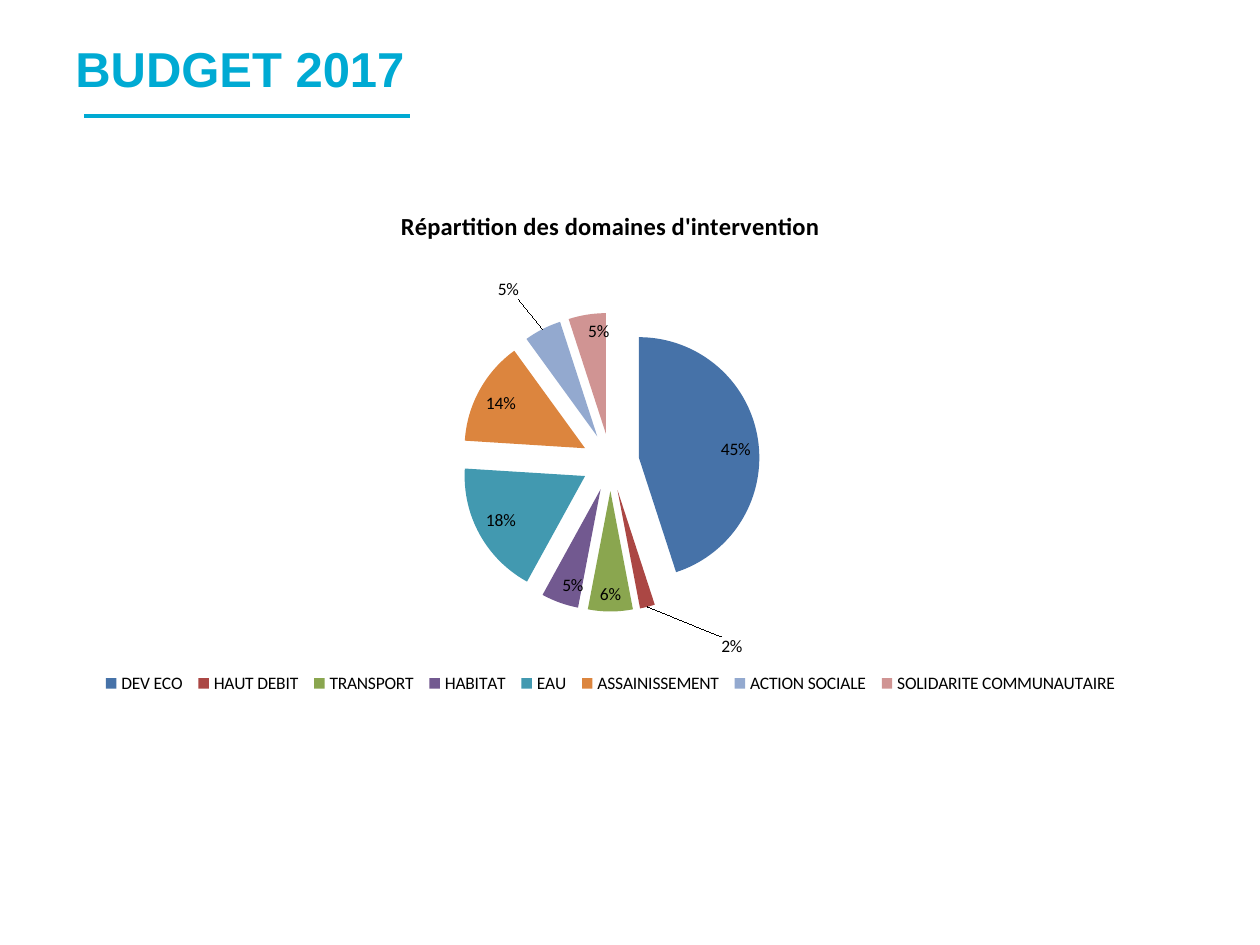
from dataclasses import dataclass

from lxml.etree import SubElement
from pptx import Presentation
from pptx.chart.chart import Chart
from pptx.chart.data import CategoryChartData
from pptx.dml.color import RGBColor
from pptx.enum.chart import XL_CHART_TYPE, XL_LABEL_POSITION, XL_LEGEND_POSITION
from pptx.enum.shapes import MSO_CONNECTOR
from pptx.enum.text import MSO_ANCHOR
from pptx.oxml import parse_xml
from pptx.oxml.ns import nsdecls, qn
from pptx.slide import Slide
from pptx.util import Inches, Pt


@dataclass(frozen=True)
class Theme:
    accent: RGBColor = RGBColor(0x00, 0xAA, 0xD3)
    ink: RGBColor = RGBColor(0, 0, 0)
    heading_font: str = "Arial"
    chart_font: str = "Calibri"
    heading_size: Pt = Pt(28)
    chart_title_size: Pt = Pt(14)
    chart_size: Pt = Pt(10)


@dataclass(frozen=True)
class Domain:
    name: str
    share: int
    color: str
    label_shift: tuple[float, float] | None = None


THEME = Theme()
EXPLOSION = 24
DOMAINS = [
    Domain("DEV ECO", 45, "4672A8"),
    Domain("HAUT DEBIT", 2, "AB4744", (0.07, 0.04)),
    Domain("TRANSPORT", 6, "8AA64F"),
    Domain("HABITAT", 5, "725990"),
    Domain("EAU", 18, "4299B0"),
    Domain("ASSAINISSEMENT", 14, "DC853E"),
    Domain("ACTION SOCIALE", 5, "93A9CF", (-0.02, -0.04)),
    Domain("SOLIDARITE COMMUNAUTAIRE", 5, "D09493"),
]


def place(element, index: int, **settings: object) -> None:
    """Give a chart element a manual layout, as fractions of the chart."""
    for old in element.findall(qn("c:layout")):
        element.remove(old)
    layout = parse_xml(f"<c:layout {nsdecls('c')}><c:manualLayout/></c:layout>")
    for tag, value in settings.items():
        SubElement(layout[0], qn(f"c:{tag}")).set("val", str(value))
    element.insert(index, layout)


def add_heading(slide: Slide) -> None:
    underline = slide.shapes.add_connector(
        MSO_CONNECTOR.STRAIGHT, Inches(0.67), Inches(0.92), Inches(3.25), Inches(0.92))
    underline.line.color.rgb = THEME.accent
    underline.line.width = Pt(2)
    SubElement(underline.element.spPr, qn("a:effectLst"))

    heading = slide.shapes.add_textbox(Inches(0.5), 0, Inches(9), Inches(1.08)).text_frame
    heading.word_wrap = True
    heading.vertical_anchor = MSO_ANCHOR.MIDDLE
    paragraph = heading.paragraphs[0]
    paragraph.text = "BUDGET 2017"
    paragraph.font.name = THEME.heading_font
    paragraph.font.size = THEME.heading_size
    paragraph.font.bold = True
    paragraph.font.color.rgb = THEME.accent


def style_slices(chart: Chart) -> None:
    series = chart.plots[0].series[0]
    labels = series.data_labels
    labels.show_percentage = True
    labels.show_value = False
    labels.number_format = "0%"
    labels.number_format_is_linked = False
    labels.position = XL_LABEL_POSITION.INSIDE_END
    labels.font.name = THEME.chart_font
    labels.font.size = THEME.chart_size
    labels.font.color.rgb = THEME.ink

    for index, domain in enumerate(DOMAINS):
        point = series.points[index]
        point.format.fill.solid()
        point.format.fill.fore_color.rgb = RGBColor.from_string(domain.color)
        if domain.label_shift:
            point.data_label.position = XL_LABEL_POSITION.OUTSIDE_END

    moved = [domain for domain in DOMAINS if domain.label_shift]
    for label, domain in zip(chart.element.xpath(".//c:dLbl"), moved):
        label.find(qn("c:showVal")).set("val", "0")
        label.find(qn("c:showPercent")).set("val", "1")
        shift_x, shift_y = domain.label_shift
        place(label, 1, x=shift_x, y=shift_y)

    first_slice = chart.element.xpath(".//c:dPt")[0]
    first_slice.addprevious(
        parse_xml(f'<c:explosion {nsdecls("c")} val="{EXPLOSION}"/>'))


def add_budget_chart(slide: Slide) -> None:
    budget = CategoryChartData()
    budget.categories = [domain.name for domain in DOMAINS]
    budget.add_series("Series 1", [domain.share for domain in DOMAINS])
    chart = slide.shapes.add_chart(
        XL_CHART_TYPE.PIE, Inches(0.76), Inches(1.48), Inches(8.17), Inches(4.56), budget).chart
    chart.font.name = THEME.chart_font
    chart.font.size = THEME.chart_size
    chart.font.color.rgb = THEME.ink

    chart.has_title = True
    title = chart.chart_title.text_frame.paragraphs[0]
    title.text = "Répartition des domaines d'intervention"
    title.font.name = THEME.chart_font
    title.font.size = THEME.chart_title_size
    title.font.bold = True
    title.font.color.rgb = THEME.ink

    chart.has_legend = True
    chart.legend.position = XL_LEGEND_POSITION.TOP
    chart.legend.include_in_layout = False
    chart.plots[0].vary_by_categories = True
    style_slices(chart)

    place(chart.element.xpath(".//c:legend")[0], 1,
          xMode="edge", yMode="edge", x=0.0, y=0.83, w=1.0, h=0.07)
    place(chart.element.xpath(".//c:plotArea")[0], 0,
          layoutTarget="inner", xMode="edge", yMode="edge", x=0.0, y=0.22, w=1.0, h=0.52)


def main() -> None:
    presentation = Presentation()
    presentation.slide_width = Inches(10)
    presentation.slide_height = Inches(7.5)
    slide = presentation.slides.add_slide(presentation.slide_layouts[6])
    add_heading(slide)
    add_budget_chart(slide)
    presentation.save("out.pptx")


if __name__ == "__main__":
    main()
